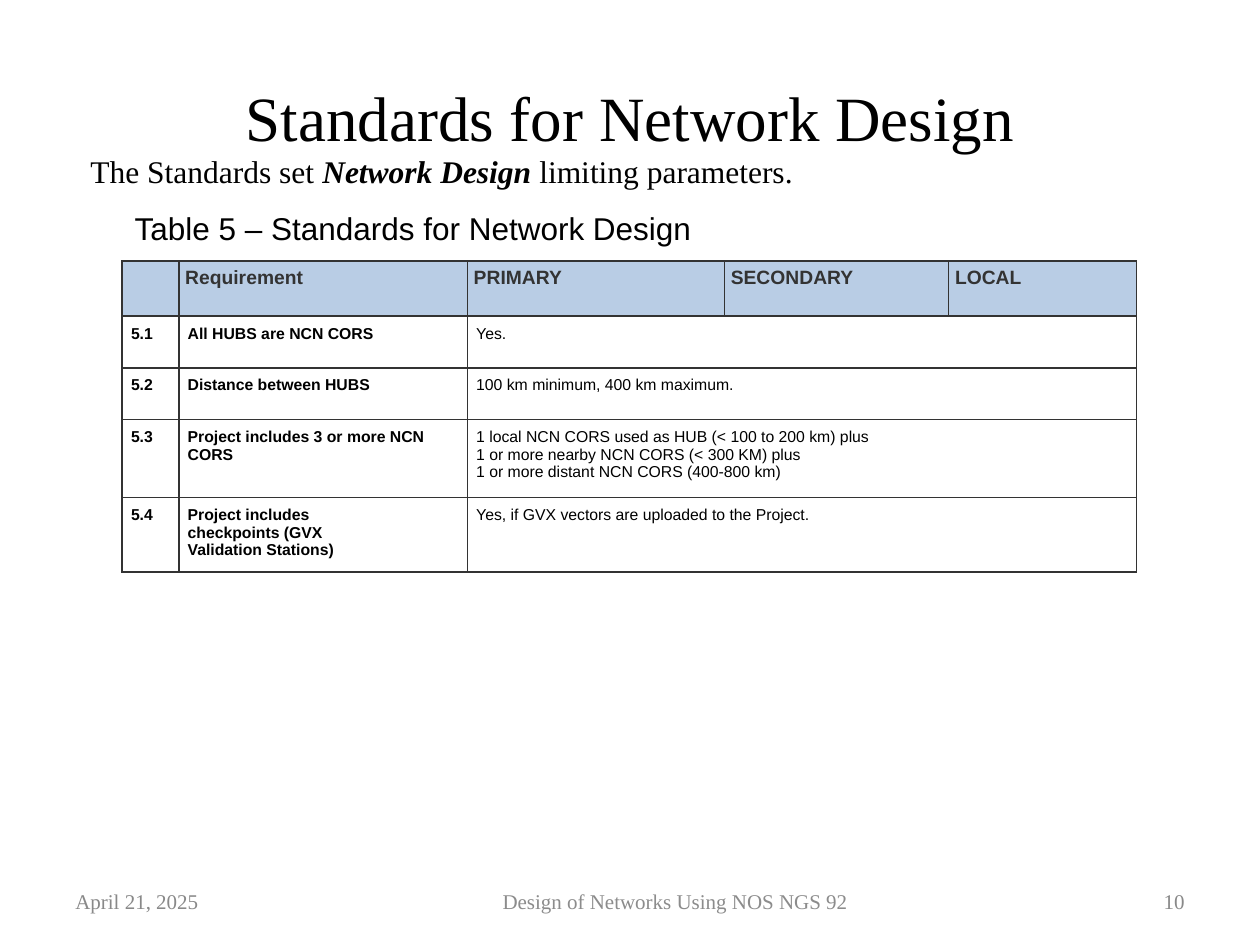
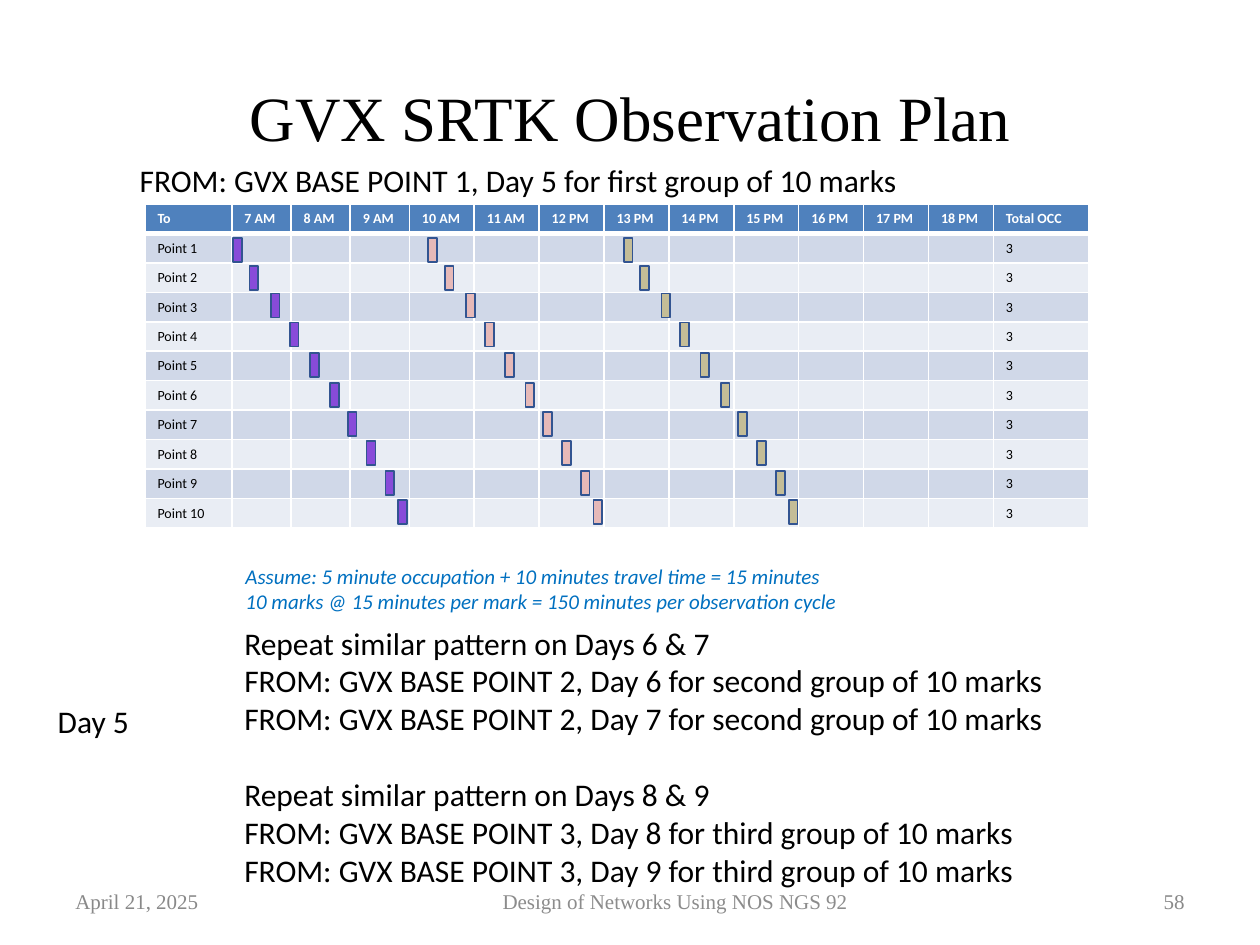
from dataclasses import dataclass

from lxml.etree import SubElement
from pptx import Presentation
from pptx.dml.color import RGBColor
from pptx.enum.shapes import MSO_SHAPE
from pptx.enum.text import MSO_ANCHOR, MSO_AUTO_SIZE, PP_ALIGN
from pptx.oxml.ns import qn
from pptx.util import Inches, Pt


@dataclass(frozen=True)
class Theme:
    serif: str = "Times New Roman"
    sans: str = "Arial"
    plain: str = "Calibri"
    black: str = "000000"
    white: str = "FFFFFF"
    footer_gray: str = "8C8C8C"
    number_gray: str = "898989"
    grid: str = "333333"
    standards_head: str = "B9CDE5"
    plan_head: str = "4F81BD"
    plan_odd: str = "D0D8E8"
    plan_even: str = "E9EDF4"
    note_blue: str = "0070C0"
    mark_line: str = "325491"
    cycles: tuple = ("884BD9", "E6B9B8", "C4BD97")
    title_size: int = 36
    body_size: int = 18
    small_size: int = 12
    head_size: int = 11
    cell_size: int = 9
    plan_size: int = 8


theme = Theme()


def write_text(frame, text, font=theme.plain, size=theme.body_size, color=theme.black,
               bold=False, italic=False, align=PP_ALIGN.LEFT, anchor=MSO_ANCHOR.TOP):
    frame.word_wrap = True
    frame.vertical_anchor = anchor
    for index, line in enumerate(text.split("\n")):
        para = frame.paragraphs[0] if index == 0 else frame.add_paragraph()
        para.alignment = align
        for part, words in enumerate(line.split("*")):
            if not words:
                continue
            emphasized = part % 2 == 1
            span = para.add_run()
            span.text = words
            span.font.name = font
            span.font.size = Pt(size)
            span.font.bold = bold or emphasized
            span.font.italic = italic or emphasized
            span.font.color.rgb = RGBColor.from_string(color)
        SubElement(para._p, qn("a:endParaRPr"), sz=str(size * 100))


def style_cell(cell, fill, line, top=1, bottom=1):
    if fill:
        cell.fill.solid()
        cell.fill.fore_color.rgb = RGBColor.from_string(fill)
    else:
        cell.fill.background()
    properties = cell._tc.get_or_add_tcPr()
    sides = (("a:lnL", 1), ("a:lnR", 1), ("a:lnT", top), ("a:lnB", bottom))
    for position, (side, width) in enumerate(sides):
        border = SubElement(properties, qn(side), w=str(Pt(width)))
        solid = SubElement(border, qn("a:solidFill"))
        SubElement(solid, qn("a:srgbClr"), val=line)
        properties.insert(position, border)


deck = Presentation()
deck.slide_width = Inches(10)
deck.slide_height = Inches(7.5)

pages = []
for title, number in (("Standards for Network Design", "10"), ("GVX SRTK Observation Plan", "58")):
    page = deck.slides.add_slide(deck.slide_layouts[5])
    pages.append(page)
    heading = page.shapes.title
    heading.left, heading.top = Inches(0.5), Inches(0.3)
    heading.width, heading.height = Inches(9), Inches(1.25)
    heading.text_frame.auto_size = MSO_AUTO_SIZE.NONE
    write_text(heading.text_frame, title, font=theme.serif, size=theme.title_size,
               align=PP_ALIGN.CENTER, anchor=MSO_ANCHOR.MIDDLE)
    footers = (
        ("April 21, 2025", 0.5, 1.4, PP_ALIGN.LEFT, theme.number_gray),
        ("Design of Networks Using NOS NGS 92 ", 2.31, 6.14, PP_ALIGN.CENTER, theme.footer_gray),
        (number, 8.71, 0.79, PP_ALIGN.RIGHT, theme.number_gray),
    )
    for text, left, width, align, color in footers:
        box = page.shapes.add_textbox(Inches(left), Inches(6.95), Inches(width), Inches(0.4))
        write_text(box.text_frame, text, font=theme.serif, size=theme.small_size,
                   color=color, align=align, anchor=MSO_ANCHOR.MIDDLE)

standards_page, plan_page = pages

box = standards_page.shapes.add_textbox(Inches(0.62), Inches(1.16), Inches(7.57), Inches(0.4))
write_text(box.text_frame, "The Standards set *Network Design *limiting parameters.", font=theme.serif)
box = standards_page.shapes.add_textbox(Inches(0.97), Inches(1.61), Inches(6.32), Inches(0.4))
write_text(box.text_frame, "Table 5 – Standards for Network Design", font=theme.sans)

standards = (
    ("", "Requirement", "PRIMARY", "SECONDARY", "LOCAL"),
    ("5.1", "All HUBS are NCN CORS", "Yes.", "", ""),
    ("5.2", "Distance between HUBS", "100 km minimum, 400 km maximum.", "", ""),
    ("5.3", "Project includes 3 or more NCN CORS",
     "1 local NCN CORS used as HUB (< 100 to 200 km) plus\n"
     "1 or more nearby NCN CORS (< 300 KM) plus\n"
     "1 or more distant NCN CORS (400-800 km)", "", ""),
    ("5.4", "Project includes\ncheckpoints (GVX\nValidation Stations)",
     "Yes, if GVX vectors are uploaded to the Project.", "", ""),
)
standards_widths = (0.45, 2.29, 2.04, 1.78, 1.49)
standards_heights = (0.44, 0.41, 0.41, 0.62, 0.56)
table = standards_page.shapes.add_table(
    len(standards), len(standards_widths), Inches(0.97), Inches(2.07),
    Inches(sum(standards_widths)), Inches(sum(standards_heights))).table
for column, width in zip(table.columns, standards_widths):
    column.width = Inches(width)
for row_index, (values, height) in enumerate(zip(standards, standards_heights)):
    table.rows[row_index].height = Inches(height)
    is_head = row_index == 0
    inset = Inches(0.05 if is_head else 0.07)
    for column_index, value in enumerate(values):
        cell = table.cell(row_index, column_index)
        cell.margin_left = cell.margin_right = cell.margin_top = cell.margin_bottom = inset
        style_cell(cell, theme.standards_head if is_head else None, theme.grid)
        write_text(cell.text_frame, value, font=theme.sans,
                   size=theme.head_size if is_head else theme.cell_size,
                   color=theme.grid if is_head else theme.black,
                   bold=is_head or column_index < 2)
    if not is_head:
        table.cell(row_index, 2).merge(table.cell(row_index, 4))

hours = [f"{hour} {'AM' if hour < 12 else 'PM'}" for hour in range(7, 19)]
plan = [["To", *hours, "Total OCC"]]
plan += [[f"Point {point}", *[""] * len(hours), "3"] for point in range(1, 11)]
plan_widths = [0.69] + [0.47] * 3 + [0.515] * 9 + [0.76]
plan_height = 2.57
table = plan_page.shapes.add_table(
    len(plan), len(plan_widths), Inches(1.15), Inches(1.62),
    Inches(sum(plan_widths)), Inches(plan_height)).table
for column, width in zip(table.columns, plan_widths):
    column.width = Inches(width)
for row_index, values in enumerate(plan):
    table.rows[row_index].height = Inches(plan_height / len(plan))
    is_head = row_index == 0
    band = theme.plan_odd if row_index % 2 else theme.plan_even
    for column_index, value in enumerate(values):
        cell = table.cell(row_index, column_index)
        style_cell(cell, theme.plan_head if is_head else band, theme.white,
                   top=3 if row_index == 1 else 1, bottom=3 if is_head else 1)
        write_text(cell.text_frame, value, size=theme.plan_size, bold=is_head,
                   color=theme.white if is_head else theme.black)

mark_lefts = (1.85, 1.98, 2.15, 2.3, 2.46, 2.62, 2.76, 2.91, 3.06, 3.16)
mark_tops = (1.89, 2.11, 2.33, 2.56, 2.8, 3.04, 3.27, 3.5, 3.74, 3.97)
for cycle, color in enumerate(theme.cycles):
    for left, top in zip(mark_lefts, mark_tops):
        mark = plan_page.shapes.add_shape(
            MSO_SHAPE.RECTANGLE, Inches(left + 1.55 * cycle), Inches(top), Inches(0.07), Inches(0.19))
        mark.shadow.inherit = False
        mark.fill.solid()
        mark.fill.fore_color.rgb = RGBColor.from_string(color)
        mark.line.color.rgb = RGBColor.from_string(theme.mark_line)
        mark.line.width = Pt(1)

box = plan_page.shapes.add_textbox(Inches(1.01), Inches(1.23), Inches(7.65), Inches(0.4))
write_text(box.text_frame, "FROM: GVX BASE POINT 1, Day 5 for first group of 10 marks")
box = plan_page.shapes.add_textbox(Inches(1.85), Inches(4.42), Inches(6.2), Inches(0.5))
write_text(box.text_frame,
           "Assume: 5 minute occupation + 10 minutes travel time = 15 minutes\n"
           "10 marks @ 15 minutes per mark = 150 minutes per observation cycle",
           size=theme.small_size, color=theme.note_blue, italic=True)
box = plan_page.shapes.add_textbox(Inches(0.36), Inches(5.52), Inches(1.3), Inches(0.4))
write_text(box.text_frame, "Day 5")

repeats = []
for base, group, days in ((2, "second", (6, 7)), (3, "third", (8, 9))):
    repeats.append(f"Repeat similar pattern on Days {days[0]} & {days[1]}")
    repeats += [f"FROM: GVX BASE POINT {base}, Day {day} for {group} group of 10 marks" for day in days]
box = plan_page.shapes.add_textbox(Inches(1.84), Inches(4.9), Inches(7.51), Inches(2.22))
write_text(box.text_frame, "\n".join(repeats))
box.text_frame.paragraphs[3].space_before = Pt(22)

deck.save("out.pptx")
